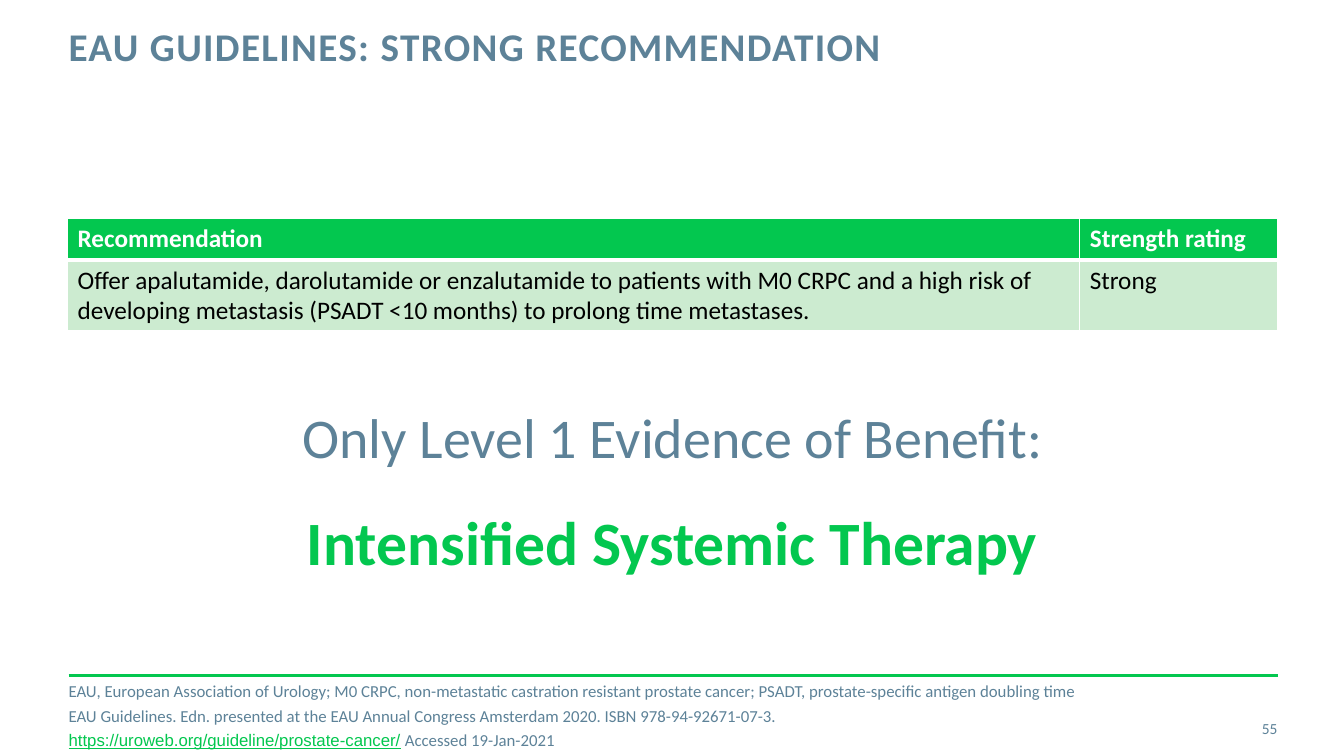
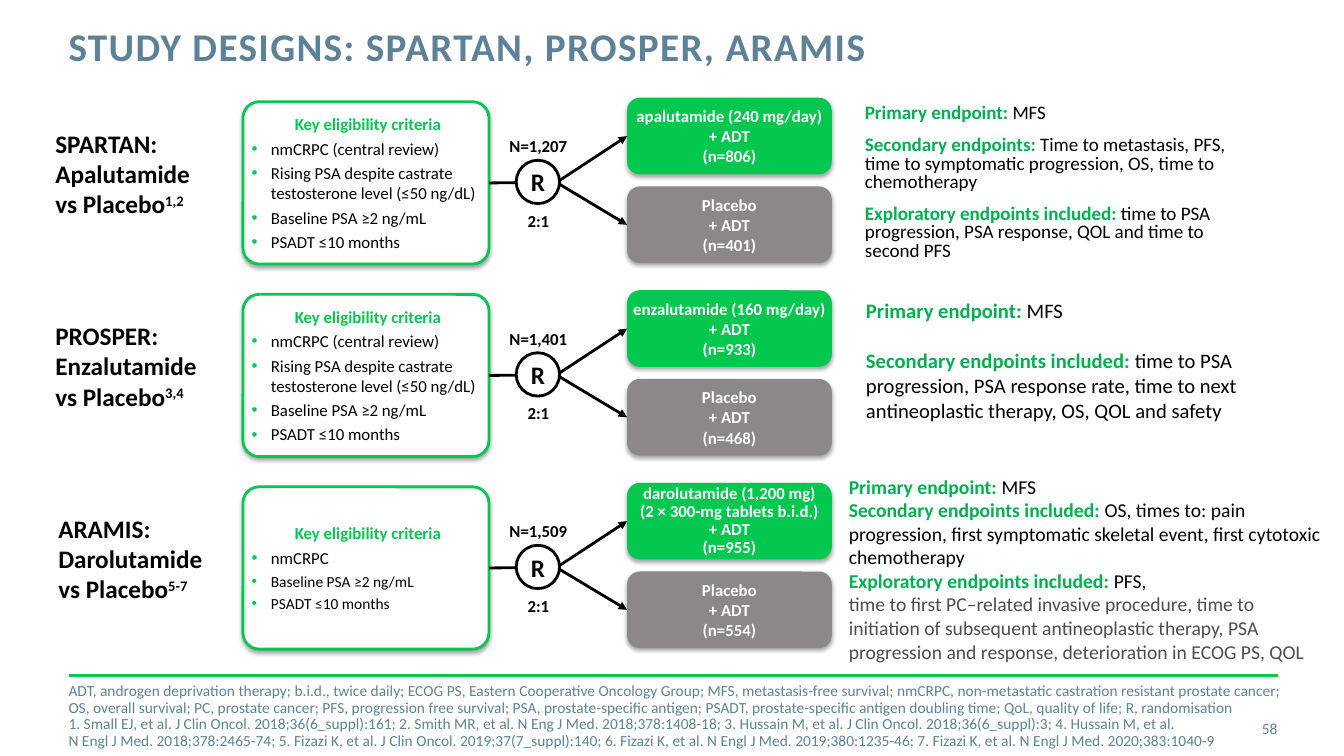
"""Build two slides on guideline advice and trial designs in nmCRPC."""
from lxml import etree
from pptx import Presentation
from pptx.dml.color import RGBColor
from pptx.enum.shapes import MSO_CONNECTOR, MSO_SHAPE
from pptx.enum.text import MSO_ANCHOR, PP_ALIGN
from pptx.oxml import parse_xml
from pptx.oxml.ns import nsdecls, qn
from pptx.util import Inches, Pt

STRAIGHT = MSO_CONNECTOR.STRAIGHT
ROUND, OVAL = MSO_SHAPE.ROUNDED_RECTANGLE, MSO_SHAPE.OVAL
TOP, MID = MSO_ANCHOR.TOP, MSO_ANCHOR.MIDDLE
CENTER, RIGHT = PP_ALIGN.CENTER, PP_ALIGN.RIGHT
HUES = {"green": "03C74F", "slate": "5D8298", "gray": "8B878B", "lead": "00B050",
        "dim": "4D4D4D", "mint": "CCEBD0", "black": "000000", "white": "FFFFFF"}
FLUSH = (0, 0, 0, 0)
INSET = (0.1, 0.05, 0.1, 0.05)
LABEL = {"size": 18, "bold": True}
SMALL = {"size": 12, "bold": True}
NOTE = {"size": 11, "hue": "slate"}
STEP = 1.91


def rgb(hue):
    """Return the named colour."""
    return RGBColor.from_string(HUES[hue])


def style(run, form):
    """Apply font values to a run."""
    form = {"name": "Calibri", "hue": "black", "bold": False, **form}
    run.font.color.rgb = rgb(form.pop("hue"))
    form["size"] = Pt(form["size"])
    for key, value in form.items():
        if key in ("spc", "baseline"):
            run.font._element.set(key, str(value))
        else:
            setattr(run.font, key, value)


def bullet(para):
    """Give a paragraph a green hanging bullet."""
    props = para._p.get_or_add_pPr()
    props.set("marL", str(Inches(0.19)))
    props.set("indent", str(-Inches(0.19)))
    color = etree.SubElement(props, qn("a:buClr"))
    etree.SubElement(color, qn("a:srgbClr")).set("val", HUES["green"])
    etree.SubElement(props, qn("a:buFont")).set("typeface", "Arial")
    etree.SubElement(props, qn("a:buChar")).set("char", "•")


def write(frame, paras, inset=INSET, anchor=TOP, wrap=True):
    """Fill a text frame with (runs, format) paragraphs."""
    sides = ("margin_left", "margin_top", "margin_right", "margin_bottom")
    form = dict(zip(sides, map(Inches, inset)))
    form.update(vertical_anchor=anchor, word_wrap=wrap)
    for key, value in form.items():
        setattr(frame, key, value)
    for i, (runs, look) in enumerate(paras):
        para = frame.add_paragraph() if i else frame.paragraphs[0]
        look = dict(look)
        if look.pop("dot", False):
            bullet(para)
        for key, value in look.items():
            setattr(para, key, value)
        for text, font in runs:
            for j, part in enumerate(text.split("\n")):
                if j:
                    para.add_line_break()
                run = para.add_run()
                run.text = part
                style(run, font)


def add_text(slide, box, paras, **form):
    """Add a text box."""
    write(slide.shapes.add_textbox(*map(Inches, box)).text_frame, paras, **form)


def add_box(slide, kind, box, fill, line=None, shade=True):
    """Add a filled shape with an optional outline and soft shadow."""
    shape = slide.shapes.add_shape(kind, *map(Inches, box))
    shape.shadow.inherit = False
    shape.fill.solid()
    shape.fill.fore_color.rgb = rgb(fill)
    if line:
        shape.line.color.rgb = rgb(line)
        shape.line.width = Pt(2)
    else:
        shape.line.fill.background()
    if shade:
        effects = shape._element.spPr.find(qn("a:effectLst"))
        effects.append(parse_xml(
            f'<a:outerShdw {nsdecls("a")} blurRad="{Pt(3.1)}" dist="{Pt(1.8)}" '
            f'dir="5400000" rotWithShape="0"><a:srgbClr val="{HUES["black"]}">'
            '<a:alpha val="35000"/></a:srgbClr></a:outerShdw>'))
    return shape


def add_line(slide, start, end, hue="black", head=False):
    """Add a straight line, with an arrowhead if asked."""
    line = slide.shapes.add_connector(STRAIGHT, *map(Inches, start + end))
    line.line.color.rgb = rgb(hue)
    line.line.width = Pt(2)
    if head:
        etree.SubElement(line.line._get_or_add_ln(), qn("a:tailEnd")).set("type", "triangle")
    etree.SubElement(line._element.spPr, qn("a:effectLst"))
    return line


def add_slide(deck, title, number):
    """Add a slide with the shared title, rule and page number."""
    slide = deck.slides.add_slide(deck.slide_layouts[6])
    add_line(slide, (0.68, 6.7), (12.68, 6.7), "green")
    font = {"size": 28, "hue": "slate", "bold": True, "spc": 100}
    add_text(slide, (0.68, 0.27, 9.56, 0.88),
             [([(title, font)], {"line_spacing": Pt(30)})], inset=FLUSH)
    add_text(slide, (11.81, 7.03, 0.86, 0.4),
             [([(number, NOTE)], {"alignment": RIGHT})], inset=FLUSH, anchor=MID)
    return slide


def edge(cell, below):
    """Give a cell white borders."""
    props = cell._tc.get_or_add_tcPr()
    for i, (side, width) in enumerate(zip("LRTB", (1, 1, 1, below))):
        props.insert(i, parse_xml(
            f'<a:ln{side} {nsdecls("a")} w="{Pt(width)}"><a:solidFill>'
            f'<a:srgbClr val="{HUES["white"]}"/></a:solidFill></a:ln{side}>'))


def add_grid(slide, box, rows, cols, tall):
    """Add a table with a green header row."""
    table = slide.shapes.add_table(len(rows), len(cols), *map(Inches, box)).table
    table.horz_banding = False
    for col, width in zip(table.columns, cols):
        col.width = Inches(width)
    for i, texts in enumerate(rows):
        table.rows[i].height = Inches(tall[i])
        top = i == 0
        for j, text in enumerate(texts):
            cell = table.cell(i, j)
            cell.fill.solid()
            cell.fill.fore_color.rgb = rgb("green" if top else "mint")
            edge(cell, 3 if top else 1)
            font = {"size": 18, "bold": top, "hue": "white" if top else "black"}
            write(cell.text_frame, [([(text, font)], {})])


def add_arm(slide, box, text, fill, look):
    """Add one treatment arm."""
    arm = add_box(slide, ROUND, box, fill)
    write(arm.text_frame, [([(text, {**SMALL, "hue": "white"})],
                            {"alignment": CENTER, **look})], inset=FLUSH, anchor=MID)
    return arm


def add_trial(slide, row, trial):
    """Draw one trial from criteria through randomisation to its arms."""
    top = 0.97 + row * STEP
    axis = top + 0.84
    left, name, text, cite = trial["label"]
    add_text(slide, (left, top + 0.25, 3.1, 1.01), [
        ([(name, LABEL)], {}),
        ([(text, LABEL), (cite, {**LABEL, "baseline": 30000})], {})])
    rules = add_box(slide, ROUND, (2.41, top + 0.04, 2.44, 1.61), "white", "green")
    rules.adjustments[0] = 0.1
    paras = [([("Key eligibility criteria", {**SMALL, "hue": "green"})], {})]
    paras += [([(rule, {"size": size})], {"dot": True, "space_before": Pt(3)})
              for rule, size in trial["rules"]]
    write(rules.text_frame, paras, inset=(0.04, 0, 0, 0), anchor=MID)
    active, look = trial["active"]
    arms = [add_arm(slide, (6.22, top, 2.03, 0.76), active, "green", look),
            add_arm(slide, (6.22, top + 0.88, 2.03, 0.76), trial["control"], "gray", {})]
    add_line(slide, (4.85, axis), (5.3, axis)).begin_connect(rules, 3)
    for arm in arms:
        add_line(slide, (5.52, axis), (6.22, axis), head=True).end_connect(arm, 1)
    for text, place in ((trial["total"], top + 0.33), ("2:1", top + 1.07)):
        add_text(slide, (4.95, place, 0.78, 0.3),
                 [([(text, SMALL)], {"alignment": CENTER})], wrap=False)
    ring = add_box(slide, OVAL, (5.12, top + 0.62, 0.43, 0.43), "white", "black", False)
    write(ring.text_frame, [([("R", LABEL)], {"alignment": CENTER})],
          inset=FLUSH, anchor=MID)


def add_ends(slide, box, size, ends, gaps, look):
    """List endpoints, each with a green lead and a gap before it."""
    paras = []
    for (lead, text, hue), gap in zip(ends, gaps):
        runs = [(lead, {"size": size, "hue": "lead", "bold": True})] if lead else []
        runs.append((text, {"size": size, "hue": hue}))
        paras.append((runs, {"space_before": Pt(gap), **look}))
    add_text(slide, box, paras)


def advise(deck):
    """Build the guideline slide."""
    slide = add_slide(deck, "EAU GUIDELINES: STRONG RECOMMENDATION", "55")
    note = {"size": 12, "hue": "slate"}
    link = {"size": 12, "hue": "green", "name": "Arial", "underline": True}
    gap = {"space_before": Pt(3)}
    add_text(slide, (0.68, 6.9, 10.95, 0.4), [
        ([("EAU, European Association of Urology; M0 CRPC, non-metastatic castration resistant "
           "prostate cancer; PSADT, prostate-specific antigen doubling time", note)], {}),
        ([("EAU Guidelines. Edn. presented at the EAU Annual Congress Amsterdam 2020. "
           "ISBN 978-94-92671-07-3.", note)], gap),
        ([("https://uroweb.org/guideline/prostate-cancer/", link),
          (" Accessed 19-Jan-2021", note)], gap)], inset=FLUSH, anchor=MID)
    add_text(slide, (0.67, 3.9, 12, 1.93), [
        ([("Only Level 1 Evidence of Benefit:", {"size": 40, "hue": "slate"})],
         {"alignment": CENTER}),
        ([("Intensified Systemic Therapy", {"size": 44, "hue": "green", "bold": True})],
         {"alignment": CENTER, "space_before": Pt(24)})], anchor=MID)
    add_grid(slide, (0.67, 2.17, 12, 1.11), [
        ("Recommendation", "Strength rating"),
        ("Offer apalutamide, darolutamide or enzalutamide to patients with M0 CRPC and a high "
         "risk of developing metastasis (PSADT <10 months) to prolong time metastases.",
         "Strong")], (10.04, 1.96), (0.41, 0.7))


def compare(deck):
    """Build the trial design slide."""
    slide = add_slide(deck, "STUDY DESIGNS: SPARTAN, PROSPER, ARAMIS", "58")
    notes = (
        "ADT, androgen deprivation therapy; b.i.d., twice daily; ECOG PS, Eastern Cooperative "
        "Oncology Group; MFS, metastasis-free survival; nmCRPC, non-metastatic castration "
        "resistant prostate cancer;\nOS, overall survival; PC, prostate cancer; PFS, progression "
        "free survival; PSA, prostate-specific antigen; PSADT, prostate-specific antigen "
        "doubling time; QoL, quality of life; R, randomisation",
        "1. Small EJ, et al. J Clin Oncol. 2018;36(6_suppl):161; 2. Smith MR, et al. N Eng J Med. "
        "2018;378:1408-18; 3. Hussain M, et al. J Clin Oncol. 2018;36(6_suppl):3; 4. Hussain M, "
        "et al.\nN Engl J Med. 2018;378:2465-74; 5. Fizazi K, et al. J Clin Oncol. "
        "2019;37(7_suppl):140; 6. Fizazi K, et al. N Engl J Med. 2019;380:1235-46; 7. Fizazi K, "
        "et al. N Engl J Med. 2020;383:1040-9")
    add_text(slide, (0.68, 6.91, 12.31, 0.4),
             [([(note, NOTE)], {"line_spacing": 0.9}) for note in notes],
             inset=FLUSH, anchor=MID)
    base, short = "Baseline PSA ≥2 ng/mL", "PSADT ≤10 months"
    rules = [("nmCRPC (central review)", 12),
             ("Rising PSA despite castrate testosterone level (≤50 ng/dL)", 12),
             (base, 12), (short, 12)]
    trials = (
        {"label": (0.45, "SPARTAN:", "Apalutamide\nvs Placebo", "1,2"), "rules": rules,
         "total": "N=1,207", "active": ("apalutamide (240 mg/day)\n+ ADT\n(n=806)", {}),
         "control": "Placebo\n+ ADT\n(n=401)"},
        {"label": (0.45, "PROSPER:", "Enzalutamide\nvs Placebo", "3,4"), "rules": rules,
         "total": "N=1,401", "active": ("enzalutamide (160 mg/day)\n+ ADT\n(n=933)", {}),
         "control": "Placebo\n+ ADT\n(n=468)"},
        {"label": (0.48, "ARAMIS:", "Darolutamide\nvs Placebo", "5-7"),
         "rules": [("nmCRPC", 12), (base, 11), (short, 11)], "total": "N=1,509",
         "active": ("darolutamide (1,200 mg)\n(2 × 300-mg tablets b.i.d.)\n+ ADT\n(n=955)",
                    {"line_spacing": 0.9}),
         "control": "Placebo\n+ ADT\n(n=554)"})
    for row, trial in enumerate(trials):
        add_trial(slide, row, trial)
    main_end = ("Primary endpoint: ", "MFS", "black")
    add_ends(slide, (8.48, 0.99, 4.02, 1.69), 13.6, [
        main_end,
        ("Secondary endpoints: ", "Time to metastasis, PFS, time to symptomatic progression, "
         "OS, time to chemotherapy", "black"),
        ("Exploratory endpoints included: ", "time to PSA progression, PSA response, QOL and "
         "time to second PFS", "black")], (0, 10, 10), {"line_spacing": 0.8})
    add_ends(slide, (8.49, 2.91, 4.18, 1.34), 14.7, [
        main_end,
        ("Secondary endpoints included: ", "time to PSA progression, PSA response rate, time to "
         "next antineoplastic therapy, OS, QOL and safety", "black")], (0, 18), {})
    add_ends(slide, (8.32, 4.66, 4.89, 2.02), 14, [
        main_end,
        ("Secondary endpoints included: ", "OS, times to: pain progression, first symptomatic "
         "skeletal event, first cytotoxic chemotherapy", "black"),
        ("Exploratory endpoints included: ", "PFS,", "black"),
        ("", "time to first PC–related invasive procedure, time to initiation of subsequent "
         "antineoplastic therapy, PSA progression and response, deterioration in ECOG PS, QOL",
         "dim")], (0, 0, 0, 0), {})


def main():
    """Build and save the deck."""
    deck = Presentation()
    deck.slide_width, deck.slide_height = Inches(13.33), Inches(7.5)
    advise(deck)
    compare(deck)
    deck.save("out.pptx")


if __name__ == "__main__":
    main()
